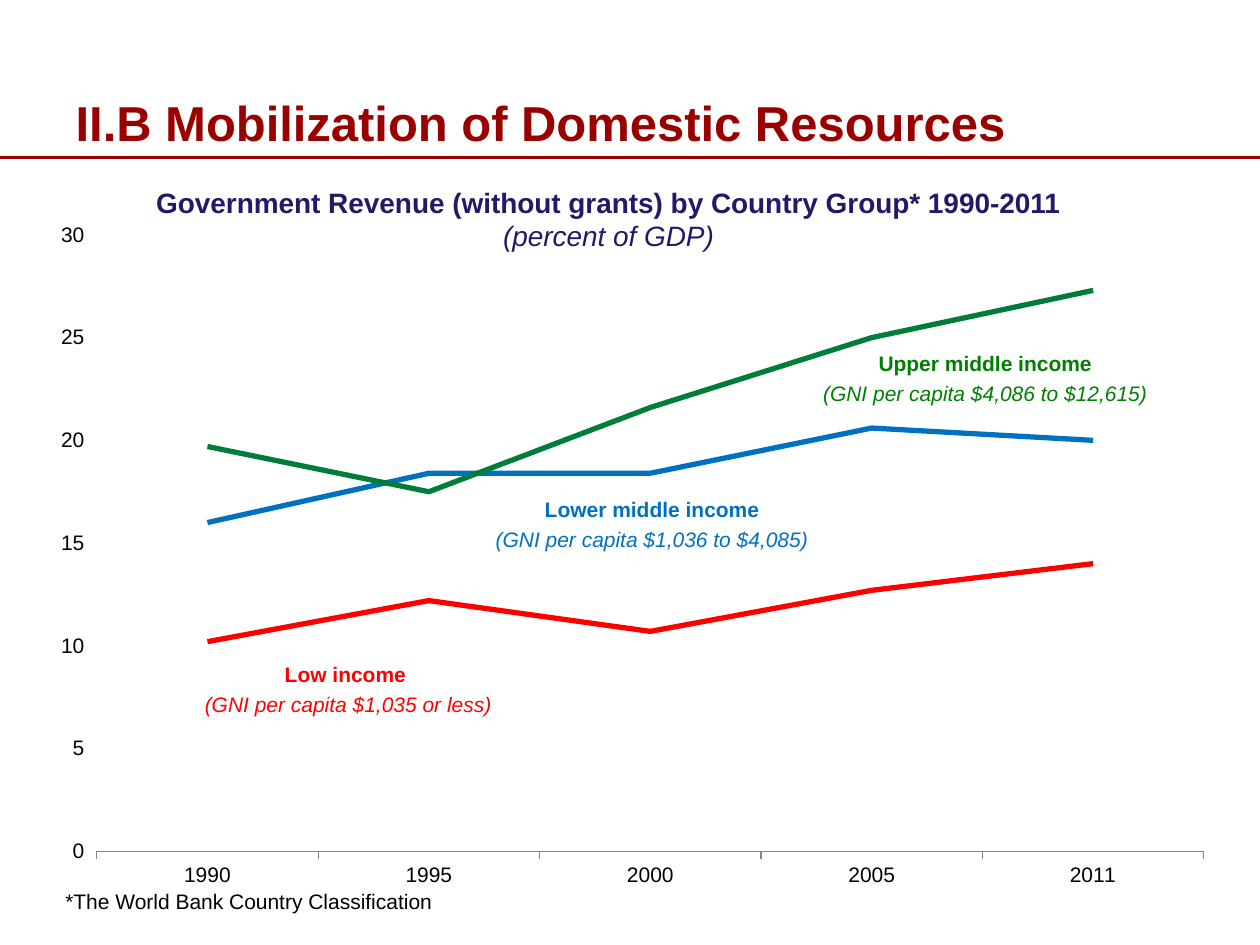
from dataclasses import dataclass

import pptx
import pptx.chart.data
import pptx.dml.color
import pptx.enum.chart
import pptx.enum.shapes
import pptx.enum.text
import pptx.oxml
import pptx.oxml.ns
import pptx.util
from pptx.util import Inches

FONT = "Arial"
COLORS = {
    "title": "990000", "heading": "201A68", "text": "000000",
    "axis": "868686", "paper": "FFFFFF",
    "low": "FF0000", "lower_middle": "0070C0",
    "upper_middle": "007E39", "upper_middle_label": "008000",
}
YEARS = ["1990", "1995", "2000", "2005", "2011"]
PLOT_AREA = {"x": 0.045, "y": 0.028, "w": 0.924, "h": 0.883}
ALIGN = pptx.enum.text.PP_ALIGN


@dataclass
class IncomeGroup:
    name: str
    gni: str
    color: str
    label_color: str
    label_box: tuple[float, float, float, float]
    revenue: tuple[float, ...]


GROUPS = [
    IncomeGroup("Low income ", "(GNI per capita $1,035 or less)", "low", "low",
                (1.43, 5.2, 2.67, 0.55), (10.2, 12.2, 10.7, 12.7, 14)),
    IncomeGroup("Lower middle income", "(GNI per capita $1,036 to $4,085)",
                "lower_middle", "lower_middle",
                (3.8, 3.89, 2.75, 0.55), (16, 18.4, 18.4, 20.6, 20)),
    IncomeGroup("Upper middle income", "(GNI per capita $4,086 to $12,615)",
                "upper_middle", "upper_middle_label",
                (6.36, 2.73, 2.92, 0.55), (19.7, 17.5, 21.6, 25, 27.3)),
]


def rgb(key: str) -> pptx.dml.color.RGBColor:
    return pptx.dml.color.RGBColor.from_string(COLORS[key])


def format_font(font, size: float, color: str, bold=False, italic=False) -> None:
    font.name, font.size = FONT, pptx.util.Pt(size)
    font.bold, font.italic = bold, italic
    font.color.rgb = rgb(color)


def add_text(slide, box: tuple[float, ...], lines: list[str]):
    frame = slide.shapes.add_textbox(*map(Inches, box)).text_frame
    frame.word_wrap = True
    frame.text = "\n".join(lines)
    for paragraph in frame.paragraphs[1:]:
        paragraph.space_before = pptx.util.Pt(3)
    return frame


def add_group_label(slide, group: IncomeGroup) -> None:
    frame = add_text(slide, group.label_box, [group.name, group.gni])
    for paragraph, is_name in zip(frame.paragraphs, (True, False)):
        paragraph.alignment = ALIGN.CENTER
        format_font(paragraph.runs[0].font, 12, group.label_color,
                    bold=is_name, italic=not is_name)


def add_rule(slide) -> None:
    rule = slide.shapes.add_connector(
        pptx.enum.shapes.MSO_CONNECTOR.STRAIGHT,
        0, Inches(1.25), Inches(10), Inches(1.25))
    rule.line.color.rgb = rgb("title")
    rule.line.width = pptx.util.Pt(2.25)
    rule._element.spPr.append(pptx.oxml.parse_xml(
        f"<a:effectLst {pptx.oxml.ns.nsdecls('a')}/>"))


def add_revenue_chart(slide) -> None:
    data = pptx.chart.data.CategoryChartData()
    data.categories = YEARS
    for group in GROUPS:
        data.add_series(group.name.strip(), group.revenue)
    chart = slide.shapes.add_chart(
        pptx.enum.chart.XL_CHART_TYPE.LINE,
        Inches(0.34), Inches(1.71), Inches(9.51), Inches(5.54), data).chart
    chart.has_legend = False
    chart.has_title = False
    format_font(chart.font, 12, "text")
    chart.plots[0].vary_by_categories = False

    for series, group in zip(chart.plots[0].series, GROUPS):
        series.smooth = False
        series.marker.style = pptx.enum.chart.XL_MARKER_STYLE.NONE
        series.format.line.color.rgb = rgb(group.color)
        series.format.line.width = pptx.util.Pt(3)

    years, percent = chart.category_axis, chart.value_axis
    for axis in (years, percent):
        axis.has_major_gridlines = False
        axis.major_tick_mark = pptx.enum.chart.XL_TICK_MARK.OUTSIDE
    years.format.line.color.rgb = rgb("axis")
    percent.format.line.fill.background()
    percent.minimum_scale, percent.maximum_scale = 0, 30
    percent.major_unit = 5
    percent.tick_labels.number_format = "0"
    percent.tick_labels.number_format_is_linked = False

    # Fixed inner plot area
    plot_area = chart._chartSpace.chart.plotArea
    for layout in plot_area.findall(pptx.oxml.ns.qn("c:layout")):
        plot_area.remove(layout)
    modes = "".join(f'<c:{side}Mode val="edge"/>' for side in "xy")
    sizes = "".join(f'<c:{side} val="{value}"/>' for side, value in PLOT_AREA.items())
    plot_area.insert(0, pptx.oxml.parse_xml(
        f"<c:layout {pptx.oxml.ns.nsdecls('c')}><c:manualLayout>"
        f'<c:layoutTarget val="inner"/>{modes}{sizes}'
        "</c:manualLayout></c:layout>"))


def add_heading(slide) -> None:
    heading = slide.shapes.add_shape(
        pptx.enum.shapes.MSO_SHAPE.RECTANGLE,
        Inches(0.75), Inches(1.42), Inches(8.16), Inches(0.63))
    heading.shadow.inherit = False
    heading.fill.solid()
    heading.fill.fore_color.rgb = rgb("paper")
    heading.line.fill.background()
    frame = heading.text_frame
    frame.word_wrap = True
    frame.vertical_anchor = pptx.enum.text.MSO_ANCHOR.TOP
    paragraph = frame.paragraphs[0]
    paragraph.alignment = ALIGN.CENTER
    paragraph.text = "Government Revenue (without grants) by Country Group* 1990-2011 "
    format_font(paragraph.runs[0].font, 16, "heading", bold=True)
    unit = paragraph.add_run()
    unit.text = "(percent of GDP)"
    format_font(unit.font, 16, "heading", italic=True)


def format_title(slide) -> None:
    title = slide.shapes.title
    title.left, title.top = Inches(0.5), Inches(0.08)
    title.width, title.height = Inches(8.17), Inches(1.17)
    frame = title.text_frame
    frame.text = "II.B Mobilization of Domestic Resources"
    frame.auto_size = pptx.enum.text.MSO_AUTO_SIZE.NONE
    frame.vertical_anchor = pptx.enum.text.MSO_ANCHOR.BOTTOM
    frame.paragraphs[0].alignment = ALIGN.LEFT
    format_font(frame.paragraphs[0].runs[0].font, 28, "title", bold=True)


def main() -> None:
    presentation = pptx.Presentation()
    presentation.slide_width, presentation.slide_height = Inches(10), Inches(7.5)
    slide = presentation.slides.add_slide(presentation.slide_layouts[5])

    # Title and rule
    format_title(slide)
    add_rule(slide)

    # Chart with its heading and footnote
    add_revenue_chart(slide)
    add_heading(slide)
    footnote = add_text(slide, (0.42, 7, 4.17, 0.3),
                        ["*The World Bank Country Classification"])
    format_font(footnote.paragraphs[0].runs[0].font, 12, "text")

    # Line labels
    for group in GROUPS:
        add_group_label(slide, group)

    presentation.save("out.pptx")


if __name__ == "__main__":
    main()
